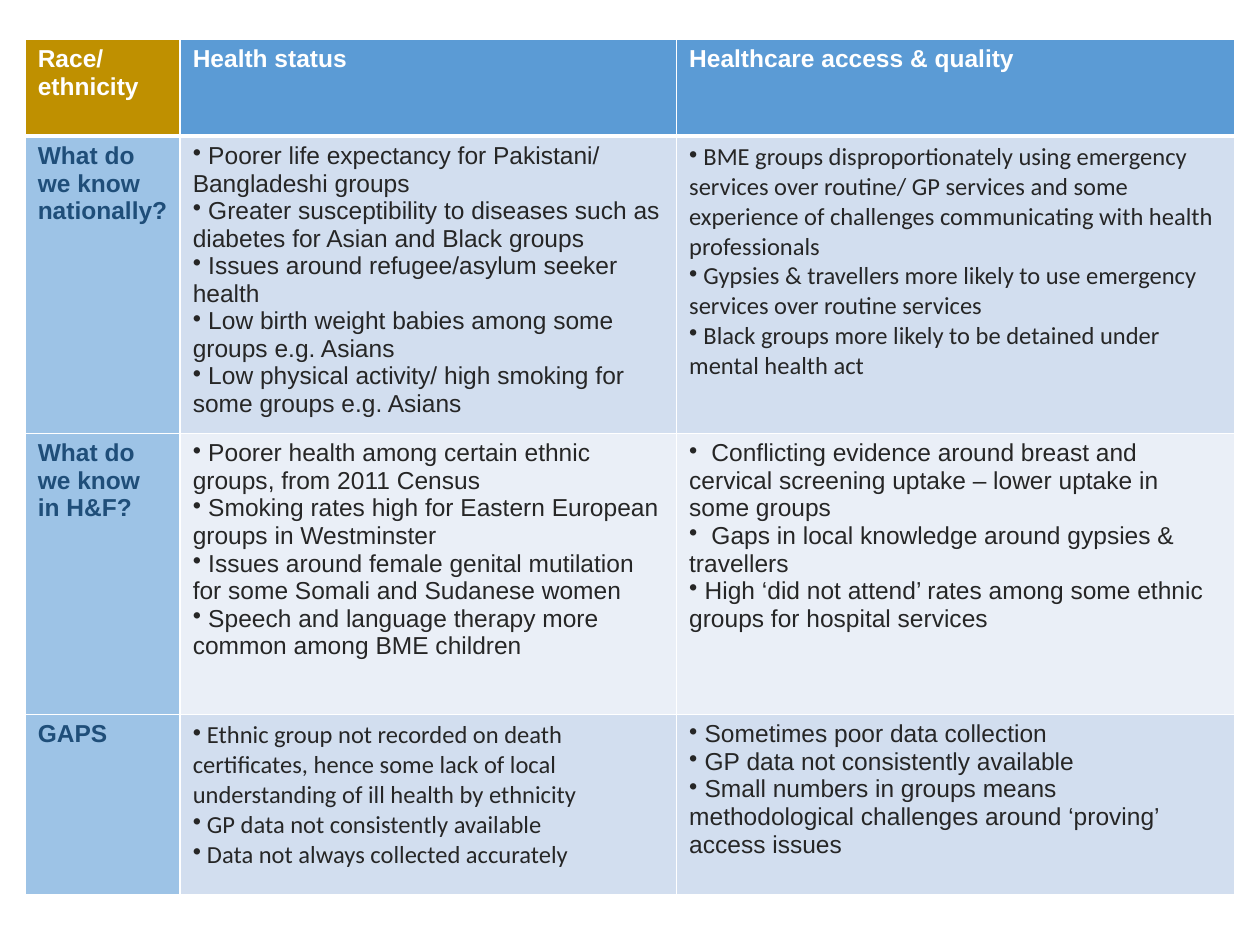
import pptx
import pptx.util
import pptx.dml.color
import pptx.oxml
import pptx.oxml.ns
import lxml.etree

Inches = pptx.util.Inches
Pt = pptx.util.Pt

COLORS = {
    "corner": "BF9000",
    "header": "5B9BD5",
    "question": "9DC3E6",
    "band_dark": "D2DEEF",
    "band_light": "EAEFF7",
    "white": "FFFFFF",
    "question_text": "1F4E79",
    "body_text": "262626",
}
COLUMN_WIDTHS = [1.23, 3.94, 4.43]
ROW_HEIGHTS = [0.77, 2.36, 2.23, 1.43]

HEADINGS = ["Race/ ethnicity", "Health status", "Healthcare access & quality"]
FINDINGS = [
    ("What do we know nationally?", [
        ("Arial", [
            " Poorer life expectancy for Pakistani/ Bangladeshi groups",
            " Greater susceptibility to diseases such as diabetes for Asian and Black groups",
            " Issues around refugee/asylum seeker health",
            " Low birth weight babies among some groups e.g. Asians",
            " Low physical activity/ high smoking for some groups e.g. Asians",
        ]),
        ("Calibri", [
            " BME groups disproportionately using emergency services over routine/ GP services "
            "and some experience of challenges communicating with health professionals",
            " Gypsies & travellers more likely to use emergency services over routine services",
            " Black groups more likely to be detained under mental health act",
        ]),
    ]),
    ("What do we know in H&F?", [
        ("Arial", [
            " Poorer health among certain ethnic groups, from 2011 Census",
            " Smoking rates high for Eastern European groups in Westminster",
            " Issues around female genital mutilation for some Somali and Sudanese women",
            " Speech and language therapy more common among BME children",
        ]),
        ("Arial", [
            "  Conflicting evidence around breast and cervical screening uptake – lower uptake "
            "in some groups",
            "  Gaps in local knowledge around gypsies & travellers",
            " High ‘did not attend’ rates among some ethnic groups for hospital services",
        ]),
    ]),
    ("GAPS", [
        ("Calibri", [
            " Ethnic group not recorded on death certificates, hence some lack of local "
            "understanding of ill health by ethnicity",
            " GP data not consistently available",
            " Data not always collected accurately",
        ]),
        ("Arial", [
            " Sometimes poor data collection",
            " GP data not consistently available",
            " Small numbers in groups means methodological challenges around ‘proving’ "
            "access issues",
        ]),
    ]),
]


def rgb(name):
    return pptx.dml.color.RGBColor.from_string(COLORS[name])


def set_borders(cell, top=1, bottom=1):
    properties = cell._tc.get_or_add_tcPr()
    widths = {"lnL": 1, "lnR": 1, "lnT": top, "lnB": bottom}
    for position, (side, width) in enumerate(widths.items()):
        line = pptx.oxml.parse_xml(
            f'<a:{side} {pptx.oxml.ns.nsdecls("a")} w="{Pt(width)}">'
            f'<a:solidFill><a:srgbClr val="{COLORS["white"]}"/></a:solidFill></a:{side}>'
        )
        properties.insert(position, line)


def add_bullet(paragraph):
    bullet = lxml.etree.SubElement(
        paragraph._p.get_or_add_pPr(), pptx.oxml.ns.qn("a:buChar"))
    bullet.set("char", "•")


def fill_cell(cell, lines, fill, color, font="Arial", bold=False, bulleted=False):
    cell.fill.solid()
    cell.fill.fore_color.rgb = rgb(fill)
    cell.text_frame.text = "\n".join(lines)
    for paragraph in cell.text_frame.paragraphs:
        if bulleted:
            add_bullet(paragraph)
        for run in paragraph.runs:
            run.font.name = font
            run.font.size = Pt(14)
            run.font.bold = bold
            run.font.color.rgb = rgb(color)


def add_findings_table(slide):
    frame = slide.shapes.add_table(
        len(ROW_HEIGHTS), len(COLUMN_WIDTHS), Inches(0.2), Inches(0.31),
        Inches(sum(COLUMN_WIDTHS)), Inches(sum(ROW_HEIGHTS)))
    table = frame.table
    for column, width in zip(table.columns, COLUMN_WIDTHS):
        column.width = Inches(width)
    for row, height in zip(table.rows, ROW_HEIGHTS):
        row.height = Inches(height)
    return table


def fill_headings(table):
    for column, heading in enumerate(HEADINGS):
        cell = table.cell(0, column)
        fill_cell(cell, [heading], "header" if column else "corner", "white", bold=True)
        set_borders(cell, bottom=3)


def fill_findings(table):
    for row, (question, answers) in enumerate(FINDINGS, start=1):
        top = 3 if row == 1 else 1
        band = "band_dark" if row % 2 else "band_light"
        question_cell = table.cell(row, 0)
        fill_cell(question_cell, [question], "question", "question_text", bold=True)
        set_borders(question_cell, top=top)
        for column, (font, points) in enumerate(answers, start=1):
            answer_cell = table.cell(row, column)
            fill_cell(answer_cell, points, band, "body_text", font, bulleted=True)
            set_borders(answer_cell, top=top)


def main():
    presentation = pptx.Presentation()
    presentation.slide_width = Inches(10)
    presentation.slide_height = Inches(7.5)
    slide = presentation.slides.add_slide(presentation.slide_layouts[6])
    table = add_findings_table(slide)
    fill_headings(table)
    fill_findings(table)
    presentation.save("out.pptx")


if __name__ == "__main__":
    main()
